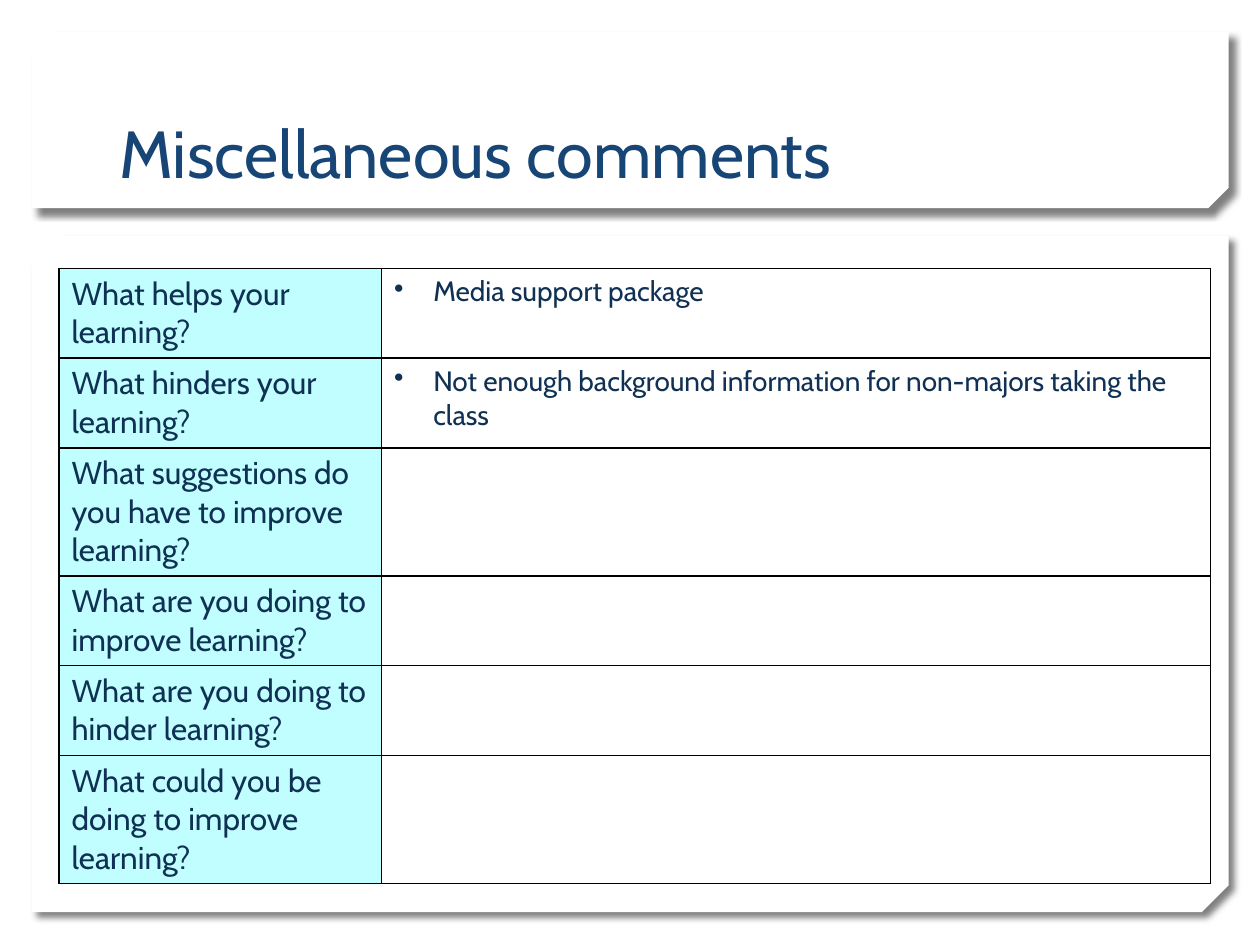
"""Build a slide with a two-column table of class feedback."""
import pptx
import pptx.dml.color
import pptx.enum.shapes
import pptx.enum.text
import pptx.oxml
import pptx.oxml.ns
import pptx.util
from pptx.util import Cm

TITLE = "Miscellaneous comments"
ROWS = [
    ("What helps your learning?", "Media support package", 1.81),
    ("What hinders your learning?",
     "Not enough background information for non-majors taking the class", 1.81),
    ("What suggestions do you have to improve learning?", "", 2.58),
    ("What are you doing to improve learning?", "", 1.81),
    ("What are you doing to hinder learning?", "", 1.81),
    ("What could you be doing to improve learning?", "", 2.58),
]
COLS = [6.5, 16.71]
PANELS = [(4.75, 13.64, 0.04), (0.64, 3.56, 0.117)]
COLORS = {"panel": "FFFFFF", "title": "174576", "text": "103154",
          "label": "C0FEFF", "line": "000000"}
FONT = "Cabin"
NS = pptx.oxml.ns.nsdecls("a")


def color(name):
    return pptx.dml.color.RGBColor.from_string(COLORS[name])


def write(frame, text, size=18, tint="text", bullet=False):
    frame.word_wrap = True
    para = frame.paragraphs[0]
    run = para.add_run()
    run.text = text
    run.font.name = FONT
    run.font.size = pptx.util.Pt(size)
    run.font.color.rgb = color(tint)
    if bullet:
        props = para._p.get_or_add_pPr()
        props.set("marL", str(Cm(0.79)))
        props.set("indent", str(-Cm(0.79)))
        props.append(pptx.oxml.parse_xml(f'<a:buChar {NS} char="•"/>'))


def add_panel(slide, top, height, snip):
    panel = slide.shapes.add_shape(
        pptx.enum.shapes.MSO_SHAPE.SNIP_2_DIAG_RECTANGLE,
        Cm(0.64), Cm(top), Cm(24.13), Cm(height))
    panel.adjustments[0] = 0
    panel.adjustments[1] = snip
    panel.fill.solid()
    panel.fill.fore_color.rgb = color("panel")
    panel.line.fill.background()
    panel.shadow.inherit = False
    props = panel._element.spPr
    props.xfrm.set("flipV", "1")
    effects = props.find(pptx.oxml.ns.qn("a:effectLst"))
    effects.append(pptx.oxml.parse_xml(
        f'<a:outerShdw {NS} blurRad="{pptx.util.Pt(4)}" dist="{pptx.util.Pt(5)}" '
        f'dir="2700000" algn="tl" rotWithShape="0"><a:srgbClr val="{COLORS["line"]}">'
        '<a:alpha val="50000"/></a:srgbClr></a:outerShdw>'))


def add_borders(cell):
    props = cell._tc.get_or_add_tcPr()
    for place, side in enumerate(("lnL", "lnR", "lnT", "lnB")):
        props.insert(place, pptx.oxml.parse_xml(
            f'<a:{side} {NS} w="{pptx.util.Pt(1)}"><a:solidFill>'
            f'<a:srgbClr val="{COLORS["line"]}"/></a:solidFill></a:{side}>'))


def add_grid(slide):
    heights = [row[2] for row in ROWS]
    grid = slide.shapes.add_table(
        len(ROWS), len(COLS), Cm(1.19), Cm(5.41),
        Cm(sum(COLS)), Cm(sum(heights))).table
    grid.first_row = grid.horz_banding = False
    for col, width in zip(grid.columns, COLS):
        col.width = Cm(width)
    for row, (label, note, height) in zip(grid.rows, ROWS):
        row.height = Cm(height)
        left, right = row.cells
        left.fill.solid()
        left.fill.fore_color.rgb = color("label")
        right.fill.background()
        write(left.text_frame, label)
        if note:
            write(right.text_frame, note, size=16, bullet=True)
        for cell in (left, right):
            add_borders(cell)


def main():
    deck = pptx.Presentation()
    deck.slide_width, deck.slide_height = Cm(25.4), Cm(19.05)
    slide = deck.slides.add_slide(deck.slide_layouts[6])
    for panel in PANELS:
        add_panel(slide, *panel)
    title = slide.shapes.add_textbox(Cm(2.16), Cm(0.81), Cm(21.06), Cm(3.18))
    title.text_frame.vertical_anchor = pptx.enum.text.MSO_ANCHOR.BOTTOM
    write(title.text_frame, TITLE, size=38, tint="title")
    add_grid(slide)
    deck.save("out.pptx")


if __name__ == "__main__":
    main()
